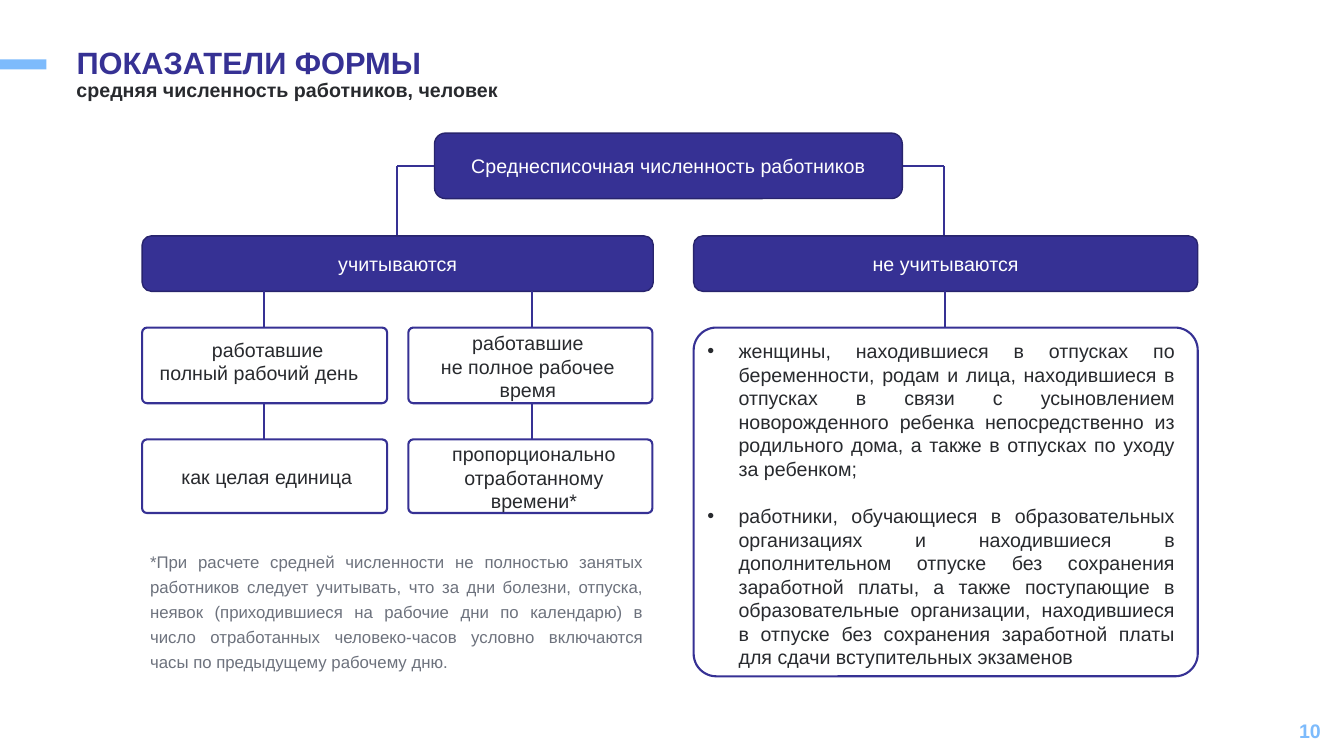
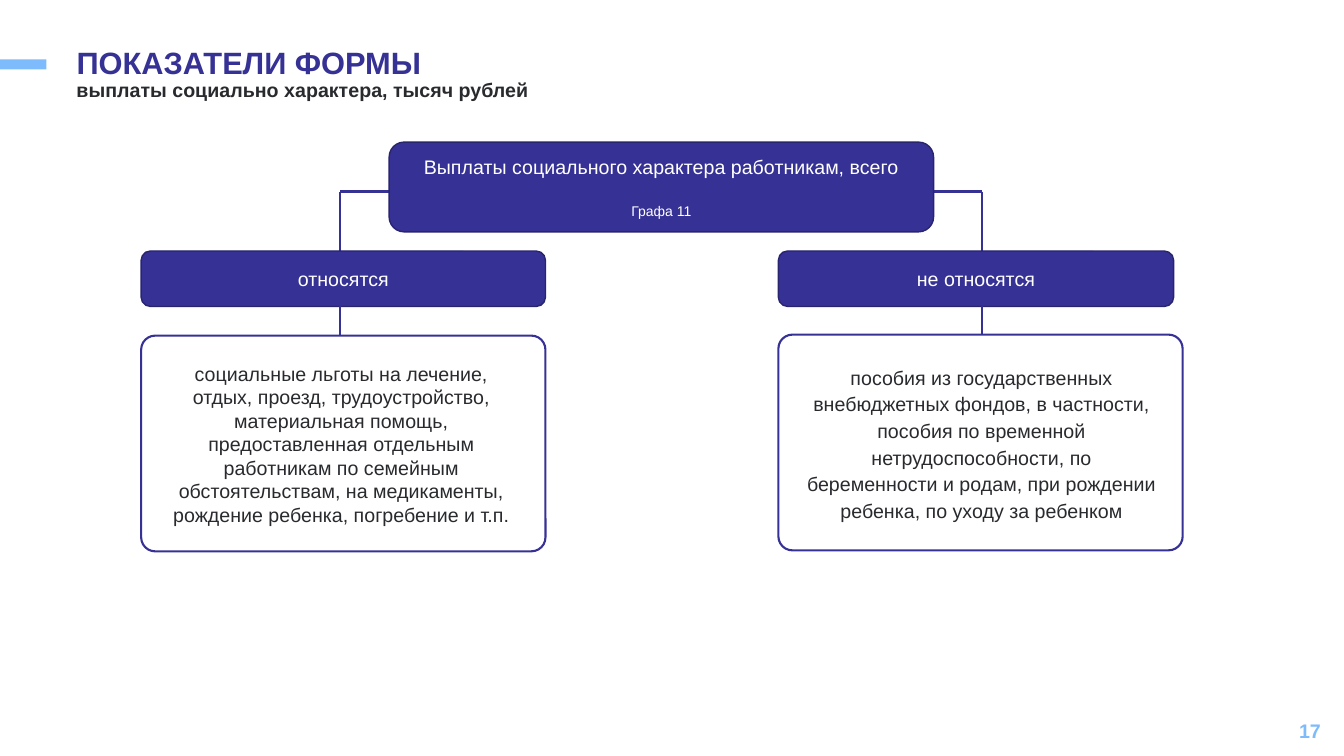
import pptx
import pptx.dml.color
import pptx.enum.shapes
import pptx.enum.text
import pptx.util
from lxml import etree

Inches = pptx.util.Inches
Pt = pptx.util.Pt
ALIGN = pptx.enum.text.PP_ALIGN
ANCHOR = pptx.enum.text.MSO_ANCHOR
SHAPE = pptx.enum.shapes.MSO_SHAPE

COLORS = {
    "indigo": "363194",
    "edge": "28246D",
    "sky": "7DBBFC",
    "ink": "282A2E",
    "gray": "6D727D",
    "white": "FFFFFF",
}
FONT = "Arial"
TITLE = "ПОКАЗАТЕЛИ ФОРМЫ"
PARAGRAPH_GAP = 16.8

SLIDES = [
    {
        "page": "10",
        "subtitle": "средняя численность работников, человек",
        "root": {"at": (4.31, 1.32, 4.64, 0.65), "lines": [("Среднесписочная численность работников", {})]},
        "rail": 1.65,
        "branches": [
            {
                "label": "учитываются",
                "at": (1.41, 2.34, 5.07, 0.55),
                "trunk": 3.94,
                "columns": [
                    (2.62, [
                        {
                            "at": (1.41, 3.25, 2.43, 0.75),
                            "insets": (0.16, 0.05, 0.1, 0.13),
                            "lines": [("работавшие", {}), ("полный рабочий день", {"align": ALIGN.LEFT})],
                        },
                        {
                            "at": (1.41, 4.36, 2.43, 0.73),
                            "insets": (0.14, 0.05, 0.1, 0.05),
                            "lines": [("как целая единица", {})],
                        },
                    ]),
                    (5.28, [
                        {
                            "at": (4.05, 3.25, 2.42, 0.75),
                            "insets": (0.05, 0.05, 0.1, 0.03),
                            "lines": [("работавшие", {}), ("не полное рабочее", {}), ("время", {})],
                        },
                        {
                            "at": (4.05, 4.36, 2.42, 0.73),
                            "insets": (0.17, 0.05, 0.1, 0.03),
                            "lines": [("пропорционально отработанному времени*", {})],
                        },
                    ]),
                ],
            },
            {
                "label": "не учитываются",
                "at": (6.88, 2.34, 5, 0.55),
                "trunk": 9.36,
                "columns": [
                    (9.37, [
                        {
                            "at": (6.88, 3.25, 5, 3.46),
                            "insets": (0.07, 0.05, 0.16, 0),
                            "anchor": ANCHOR.TOP,
                            "lines": [
                                ("женщины, находившиеся в отпусках по беременности, родам и лица, находившиеся "
                                 "в отпусках в связи с усыновлением новорожденного ребенка непосредственно из "
                                 "родильного дома, а также в отпусках по уходу за ребенком;",
                                 {"align": ALIGN.JUSTIFY, "bullet": True}),
                                ("работники, обучающиеся в образовательных организациях и находившиеся в "
                                 "дополнительном отпуске без сохранения заработной платы, а также поступающие в "
                                 "образовательные организации, находившиеся в отпуске без сохранения заработной "
                                 "платы для сдачи вступительных экзаменов",
                                 {"align": ALIGN.JUSTIFY, "bullet": True, "before": PARAGRAPH_GAP}),
                            ],
                        },
                    ]),
                ],
            },
        ],
        "footnote": "*При расчете средней численности не полностью занятых работников следует учитывать, что за "
                    "дни болезни, отпуска, неявок (приходившиеся на рабочие дни по календарю) в число "
                    "отработанных человеко-часов условно включаются часы по предыдущему рабочему дню.",
    },
    {
        "page": "17",
        "subtitle": "выплаты социально характера, тысяч рублей",
        "root": {
            "at": (3.86, 1.41, 5.4, 0.89),
            "lines": [
                ("Выплаты социального характера работникам, всего", {}),
                ("Графа 11", {"size": 10, "before": PARAGRAPH_GAP}),
            ],
        },
        "rail": 1.9,
        "branches": [
            {
                "label": "относятся",
                "at": (1.4, 2.49, 4.01, 0.55),
                "trunk": 3.37,
                "columns": [
                    (3.37, [
                        {
                            "at": (1.4, 3.33, 4.01, 2.14),
                            "insets": (0.21, 0.01, 0.25, 0),
                            "lines": [
                                ("социальные льготы на лечение, отдых, проезд, трудоустройство, материальная "
                                 "помощь, предоставленная отдельным работникам по семейным обстоятельствам, на "
                                 "медикаменты, рождение ребенка, погребение и т.п.", {}),
                            ],
                        },
                    ]),
                ],
            },
            {
                "label": "не относятся",
                "at": (7.72, 2.49, 3.92, 0.55),
                "trunk": 9.74,
                "columns": [
                    (9.74, [
                        {
                            "at": (7.72, 3.32, 4.01, 2.14),
                            "insets": (0.21, 0.05, 0.19, 0.05),
                            "lines": [
                                ("пособия из государственных внебюджетных фондов, в частности, пособия по "
                                 "временной нетрудоспособности, по беременности и родам, при рождении ребенка, "
                                 "по уходу за ребенком", {"spacing": Pt(19)}),
                            ],
                        },
                    ]),
                ],
            },
        ],
    },
]


def rgb(name):
    return pptx.dml.color.RGBColor.from_string(COLORS[name])


def add_bullet(paragraph):
    properties = paragraph._p.get_or_add_pPr()
    properties.set("marL", str(Inches(0.31)))
    properties.set("indent", str(-Inches(0.31)))
    tag = pptx.oxml.ns.qn
    etree.SubElement(properties, tag("a:buFont"), typeface=FONT)
    etree.SubElement(properties, tag("a:buChar"), char="•")


def write(frame, lines, color, align=ALIGN.CENTER, size=14, bold=False, anchor=ANCHOR.MIDDLE,
          insets=(0.1, 0.05, 0.1, 0.05)):
    frame.word_wrap = True
    frame.auto_size = pptx.enum.text.MSO_AUTO_SIZE.NONE
    frame.vertical_anchor = anchor
    frame.margin_left, frame.margin_top, frame.margin_right, frame.margin_bottom = map(Inches, insets)
    for index, (text, style) in enumerate(lines):
        paragraph = frame.paragraphs[0] if index == 0 else frame.add_paragraph()
        paragraph.text = text
        if style.get("bullet"):
            add_bullet(paragraph)
        paragraph.alignment = style.get("align", align)
        if "spacing" in style:
            paragraph.line_spacing = style["spacing"]
        if "before" in style:
            paragraph.space_before = Pt(style["before"])
        paragraph.font.name = FONT
        paragraph.font.size = Pt(style.get("size", size))
        paragraph.font.bold = bold
        paragraph.font.color.rgb = rgb(color)


def add_text(slide, at, lines, color, **style):
    box = slide.shapes.add_textbox(*map(Inches, at))
    write(box.text_frame, lines, color, **style)


def add_box(slide, at, kind=SHAPE.ROUNDED_RECTANGLE, fill=None, line=None, width=1.0):
    box = slide.shapes.add_shape(kind, *map(Inches, at))
    box.shadow.inherit = False
    if fill:
        box.fill.solid()
        box.fill.fore_color.rgb = rgb(fill)
    else:
        box.fill.background()
    if line:
        box.line.color.rgb = rgb(line)
        box.line.width = Pt(width)
    else:
        box.line.fill.background()
    return box


def add_header(slide, at, lines):
    header = add_box(slide, at, fill="indigo", line="edge")
    write(header.text_frame, lines, "white")


def add_card(slide, card):
    outline = add_box(slide, card["at"], line="indigo", width=1.5)
    outline.adjustments[0] = 0.065
    write(outline.text_frame, card["lines"], "ink", insets=card["insets"],
          anchor=card.get("anchor", ANCHOR.MIDDLE))


def add_line(slide, x1, y1, x2, y2):
    line = slide.shapes.add_connector(
        pptx.enum.shapes.MSO_CONNECTOR.STRAIGHT, *map(Inches, (x1, y1, x2, y2)))
    line.line.color.rgb = rgb("indigo")
    line.line.width = Pt(1.5)
    etree.SubElement(line._element.spPr, pptx.oxml.ns.qn("a:effectLst"))


def add_frame(slide, content):
    add_box(slide, (0, 0.59, 0.46, 0.1), kind=SHAPE.RECTANGLE, fill="sky")
    title = slide.shapes.title
    title.left, title.top, title.width, title.height = map(Inches, (0.66, 0.43, 10.41, 0.44))
    heading = {"color": "indigo", "align": ALIGN.LEFT, "bold": True, "anchor": ANCHOR.TOP}
    write(title.text_frame, [(TITLE, {"spacing": 0.9})], size=22, **heading)
    heading["color"] = "ink"
    add_text(slide, (0.66, 0.75, 10.41, 0.44), [(content["subtitle"], {"spacing": 0.9})], **heading)
    add_text(slide, (10.2, 7.05, 3, 0.4), [(content["page"], {})], "sky", align=ALIGN.RIGHT, bold=True)


def add_tree(slide, content):
    root_left, _, root_width, _ = content["root"]["at"]
    rail = content["rail"]
    for branch in content["branches"]:
        _, top, _, height = branch["at"]
        trunk = branch["trunk"]
        root_edge = root_left if trunk < root_left else root_left + root_width
        add_line(slide, root_edge, rail, trunk, rail)
        add_line(slide, trunk, rail, trunk, top)
        add_header(slide, branch["at"], [(branch["label"], {})])
        for stem, cards in branch["columns"]:
            bottom = top + height
            for card in cards:
                _, card_top, _, card_height = card["at"]
                add_line(slide, stem, bottom, stem, card_top)
                add_card(slide, card)
                bottom = card_top + card_height
    add_header(slide, content["root"]["at"], content["root"]["lines"])


def main():
    deck = pptx.Presentation()
    deck.slide_width, deck.slide_height = Inches(13.33), Inches(7.5)
    title_only = deck.slide_layouts[5]
    for content in SLIDES:
        slide = deck.slides.add_slide(title_only)
        add_frame(slide, content)
        add_tree(slide, content)
        if "footnote" in content:
            add_text(slide, (1.39, 5.37, 5.09, 1.34), [(content["footnote"], {"spacing": Pt(18)})],
                     "gray", align=ALIGN.JUSTIFY, size=12, anchor=ANCHOR.TOP)
    deck.save("out.pptx")


if __name__ == "__main__":
    main()
